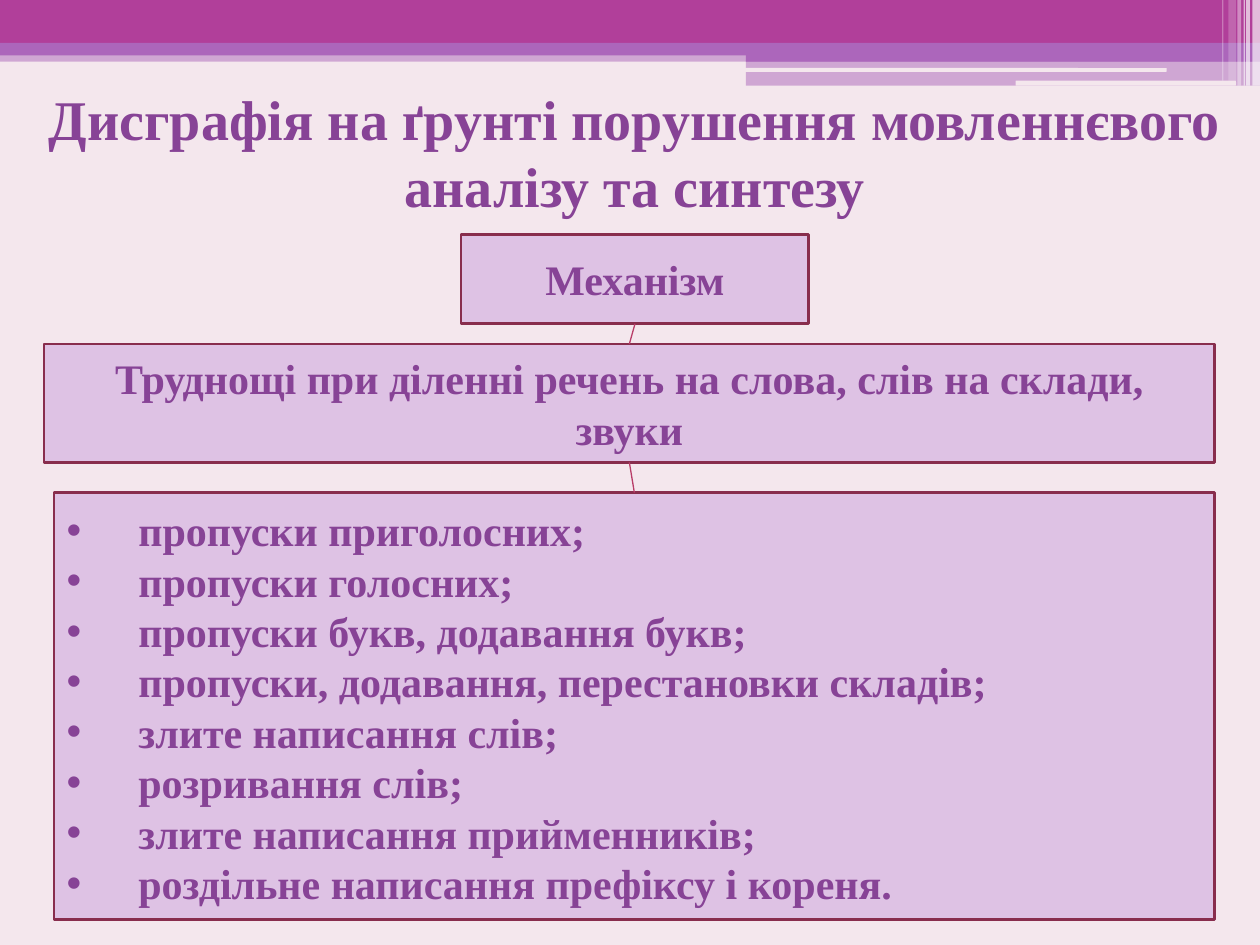
import pptx
import pptx.util
import pptx.dml.color
import pptx.enum.shapes
import pptx.enum.text
import pptx.oxml
import pptx.oxml.ns
from pptx.util import Inches

COLORS = {
    "background": "F4E7ED",
    "magenta": "B13F9A",
    "violet": "AC66BB",
    "white": "FFFFFF",
    "text": "874396",
    "box": "DEC2E4",
    "border": "882D4D",
    "connector": "B83D68",
}
RECTANGLE = pptx.enum.shapes.MSO_SHAPE.RECTANGLE
ROUNDED = pptx.enum.shapes.MSO_SHAPE.ROUNDED_RECTANGLE
CENTER = pptx.enum.text.PP_ALIGN.CENTER
LEFT = pptx.enum.text.PP_ALIGN.LEFT
MIDDLE = pptx.enum.text.MSO_ANCHOR.MIDDLE
TOP = pptx.enum.text.MSO_ANCHOR.TOP


def rgb(name):
    return pptx.dml.color.RGBColor.from_string(COLORS[name])


def write_text(shape, lines, size=24, align=CENTER, anchor=MIDDLE, bullet=None):
    frame = shape.text_frame
    frame.word_wrap = True
    frame.auto_size = pptx.enum.text.MSO_AUTO_SIZE.NONE
    frame.vertical_anchor = anchor
    frame.text = "\n".join(lines)
    for paragraph in frame.paragraphs:
        paragraph.alignment = align
        paragraph.space_before = pptx.util.Pt(0)
        font = paragraph.runs[0].font
        font.name = "Times New Roman"
        font.size = pptx.util.Pt(size)
        font.bold = True
        font.color.rgb = rgb("text")
        if bullet:
            properties = paragraph._p.get_or_add_pPr()
            properties.set("marL", str(Inches(0.57)))
            properties.set("indent", str(-Inches(0.57)))
            bullet_font = pptx.oxml.ns.qn("a:buFont")
            bullet_char = pptx.oxml.ns.qn("a:buChar")
            properties.append(properties.makeelement(bullet_font, {"typeface": "Arial"}))
            properties.append(properties.makeelement(bullet_char, {"char": bullet}))


presentation = pptx.Presentation()
presentation.slide_width = Inches(10)
presentation.slide_height = Inches(7.5)
slide = presentation.slides.add_slide(presentation.slide_layouts[5])
slide.background.fill.solid()
slide.background.fill.fore_color.rgb = rgb("background")

# Header bands and stripes: shape, left, top, width, height, color, opacity in percent
decorations = [
    (RECTANGLE, 0, 0.4, 10, 0.09, "violet", 50),
    (RECTANGLE, 0, 0, 10, 0.34, "magenta", 100),
    (RECTANGLE, 0, 0.34, 10, 0.1, "violet", 100),
    (RECTANGLE, 5.92, 0.39, 4.08, 0.1, "violet", 100),
    (RECTANGLE, 5.92, 0.48, 4.08, 0.2, "violet", 50),
    (ROUNDED, 5.91, 0.54, 3.35, 0.03, "background", 100),
    (ROUNDED, 8.06, 0.64, 1.75, 0.04, "background", 100),
    (RECTANGLE, 9.94, 0, 0.06, 0.68, "white", 65),
    (RECTANGLE, 9.89, 0, 0.03, 0.68, "white", 65),
    (RECTANGLE, 9.87, 0, 0.01, 0.68, "white", 60),
    (RECTANGLE, 9.82, 0, 0.03, 0.68, "white", 40),
    (RECTANGLE, 9.75, 0, 0.06, 0.64, "white", 20),
    (RECTANGLE, 9.7, 0, 0.01, 0.64, "white", 30),
]
for kind, left, top, width, height, color, opacity in decorations:
    band = slide.shapes.add_shape(
        kind, Inches(left), Inches(top), Inches(width), Inches(height))
    band.shadow.inherit = False
    band.fill.solid()
    band.fill.fore_color.rgb = rgb(color)
    band.line.fill.background()
    if opacity < 100:
        color_element = band.fill._xPr.find(".//" + pptx.oxml.ns.qn("a:srgbClr"))
        alpha = color_element.makeelement(
            pptx.oxml.ns.qn("a:alpha"), {"val": str(opacity * 1000)})
        color_element.append(alpha)

title = slide.shapes.title
title.left, title.top = Inches(0.2), Inches(0.62)
title.width, title.height = Inches(9.68), Inches(1.18)
write_text(
    title,
    ["Дисграфія на ґрунті порушення мовленнєвого", "аналізу та синтезу"],
    size=32, anchor=TOP)

symptoms = [
    "пропуски приголосних;",
    "пропуски голосних;",
    "пропуски букв, додавання букв;",
    "пропуски, додавання, перестановки складів;",
    "злите написання слів;",
    "розривання слів;",
    "злите написання прийменників;",
    "роздільне написання префіксу і кореня.",
]
difficulty = "Труднощі при діленні речень на слова, слів на склади, звуки"
box_rows = [
    (3.66, 1.86, 2.76, 0.71, ["Механізм"], {}),
    (0.35, 2.73, 9.29, 0.94, [difficulty], {}),
    (0.43, 3.91, 9.21, 3.39, symptoms, {"align": LEFT, "bullet": "•"}),
]
boxes = []
for left, top, width, height, lines, text_format in box_rows:
    box = slide.shapes.add_shape(
        RECTANGLE, Inches(left), Inches(top), Inches(width), Inches(height))
    box.shadow.inherit = False
    box.fill.solid()
    box.fill.fore_color.rgb = rgb("box")
    box.line.color.rgb = rgb("border")
    box.line.width = pptx.util.Pt(1.5)
    write_text(box, lines, **text_format)
    boxes.append(box)

for upper, lower in zip(boxes, boxes[1:]):
    connector = slide.shapes.add_connector(
        pptx.enum.shapes.MSO_CONNECTOR.STRAIGHT, 0, 0, 0, 0)
    connector.begin_connect(upper, 2)
    connector.end_connect(lower, 0)
    connector.line.color.rgb = rgb("connector")
    connector.line.width = pptx.util.Pt(0.75)
    properties = connector._element.spPr
    properties.append(properties.makeelement(pptx.oxml.ns.qn("a:effectLst"), {}))

presentation.save("out.pptx")
